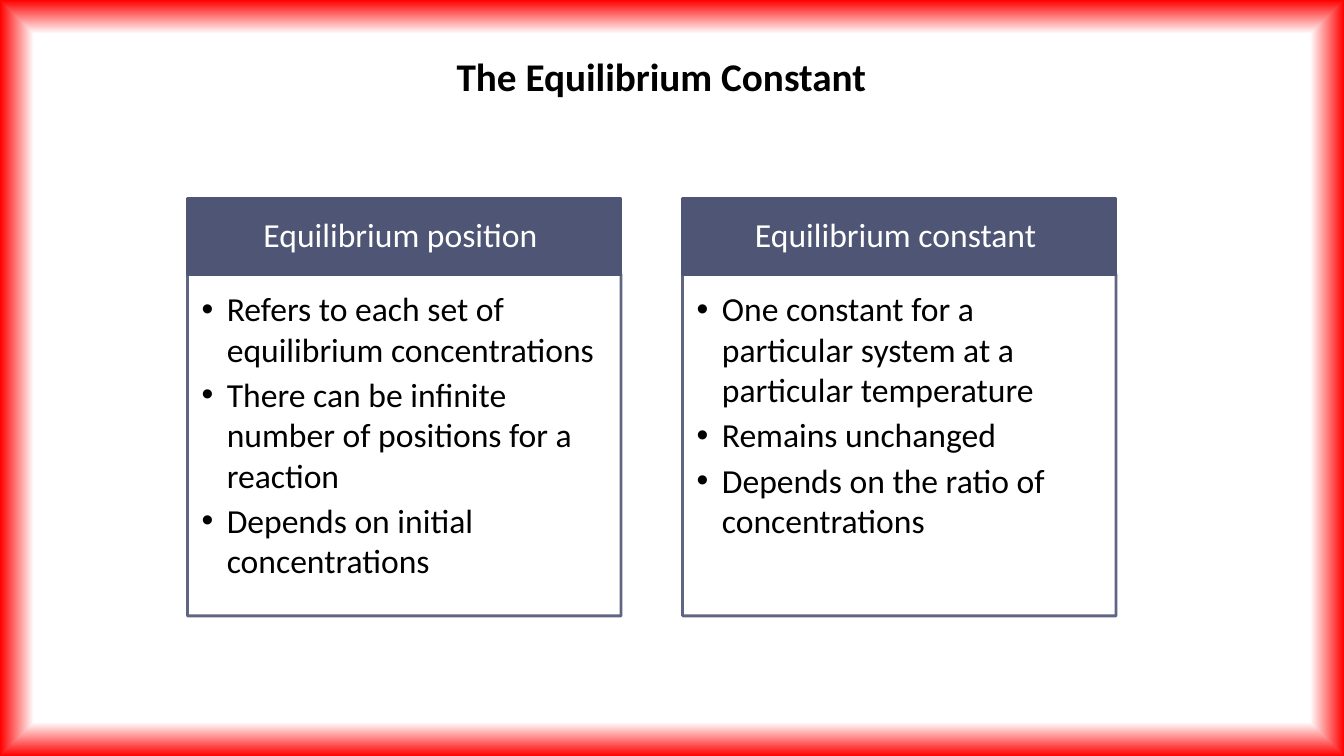
"""Build a slide that compares equilibrium position with equilibrium constant."""
from dataclasses import dataclass

from lxml.etree import SubElement
from pptx import Presentation
from pptx.dml.color import RGBColor
from pptx.enum.shapes import MSO_SHAPE
from pptx.enum.text import MSO_ANCHOR, PP_ALIGN
from pptx.oxml import parse_xml
from pptx.oxml.ns import nsdecls, qn
from pptx.util import Inches, Pt

TITLE = "The Equilibrium Constant"
CARDS = [
    ("Equilibrium position ", [
        "Refers to each set of equilibrium concentrations",
        "There can be infinite number of positions for a reaction",
        "Depends on initial concentrations",
    ]),
    ("Equilibrium constant ", [
        "One constant for a particular system at a particular temperature",
        "Remains unchanged",
        "Depends on the ratio of concentrations",
    ]),
]

SLIDE_WIDTH, SLIDE_HEIGHT = 13.33, 7.5
TITLE_BOX = (4.43, 0.47, 4.76, 0.57)
CARD_LEFT, CARD_TOP = 1.86, 1.97
CARD_WIDTH, CARD_GAP = 4.3, 0.61
HEADING_HEIGHT, BODY_HEIGHT = 0.75, 3.39
BULLET_INDENT = 0.25


@dataclass(frozen=True)
class Theme:
    font: str = "Calibri"
    ink: str = "000000"
    paper: str = "FFFFFF"
    slate: str = "4E5575"
    glow: str = "FF0000"
    title_size: int = 28
    text_size: int = 24
    line_width: int = 2
    bullet_gap: float = 3.6
    outline_alpha: int = 90


THEME = Theme()


def paint_background(slide):
    stops = [(0, THEME.paper), (73, THEME.paper), (91, THEME.paper), (100, THEME.glow)]
    stop_xml = "".join(
        f'<a:gs pos="{share * 1000}"><a:srgbClr val="{color}"/></a:gs>'
        for share, color in stops
    )
    background = parse_xml(
        f'<p:bg {nsdecls("p", "a")}><p:bgPr><a:gradFill rotWithShape="1">'
        f'<a:gsLst>{stop_xml}</a:gsLst><a:path path="shape">'
        '<a:fillToRect l="50000" t="50000" r="50000" b="50000"/></a:path>'
        '</a:gradFill><a:effectLst/></p:bgPr></p:bg>'
    )
    slide.element.cSld.insert(0, background)


def add_bullet(paragraph):
    properties = paragraph._p.get_or_add_pPr()
    properties.set("marL", str(Inches(BULLET_INDENT)))
    properties.set("indent", str(-Inches(BULLET_INDENT)))
    SubElement(properties, qn("a:buFont"), typeface="Arial")
    SubElement(properties, qn("a:buChar"), char="•")


def write_text(shape, lines, *, size=THEME.text_size, color=THEME.ink, bold=False,
               align=PP_ALIGN.LEFT, anchor=MSO_ANCHOR.TOP, margins=(0.1, 0.05, 0.1, 0.05),
               spacing=None, gap=None, bullets=False):
    frame = shape.text_frame
    frame.word_wrap = True
    frame.vertical_anchor = anchor
    (frame.margin_left, frame.margin_top,
     frame.margin_right, frame.margin_bottom) = map(Inches, margins)
    for index, line in enumerate(lines):
        paragraph = frame.add_paragraph() if index else frame.paragraphs[0]
        paragraph.alignment = align
        paragraph.line_spacing = spacing
        paragraph.space_after = gap
        if bullets:
            add_bullet(paragraph)
        run = paragraph.add_run()
        run.text = line
        run.font.name = THEME.font
        run.font.size = Pt(size)
        run.font.bold = bold
        run.font.color.rgb = RGBColor.from_string(color)


def add_panel(slide, left, top, height, *, filled):
    panel = slide.shapes.add_shape(
        MSO_SHAPE.RECTANGLE, *map(Inches, (left, top, CARD_WIDTH, height)))
    panel.shadow.inherit = False
    panel.line.width = Pt(THEME.line_width)
    panel.line.color.rgb = RGBColor.from_string(THEME.slate)
    if filled:
        panel.fill.solid()
        panel.fill.fore_color.rgb = RGBColor.from_string(THEME.slate)
    else:
        panel.fill.background()
        outline = panel.line._ln.find(".//" + qn("a:srgbClr"))
        SubElement(outline, qn("a:alpha"), val=str(THEME.outline_alpha * 1000))
    return panel


def add_card(slide, left, heading, points):
    header = add_panel(slide, left, CARD_TOP, HEADING_HEIGHT, filled=True)
    write_text(header, [heading], color=THEME.paper, align=PP_ALIGN.CENTER,
               anchor=MSO_ANCHOR.MIDDLE, margins=(0.19, 0.11, 0.19, 0.11), spacing=0.9)
    body = add_panel(slide, left, CARD_TOP + HEADING_HEIGHT, BODY_HEIGHT, filled=False)
    write_text(body, points, margins=(0.14, 0.14, 0.19, 0.21),
               gap=Pt(THEME.bullet_gap), bullets=True)


def main():
    presentation = Presentation()
    presentation.slide_width = Inches(SLIDE_WIDTH)
    presentation.slide_height = Inches(SLIDE_HEIGHT)
    slide = presentation.slides.add_slide(presentation.slide_layouts[6])
    paint_background(slide)
    title = slide.shapes.add_textbox(*map(Inches, TITLE_BOX))
    write_text(title, [TITLE], size=THEME.title_size, bold=True)
    for column, (heading, points) in enumerate(CARDS):
        add_card(slide, CARD_LEFT + column * (CARD_WIDTH + CARD_GAP), heading, points)
    presentation.save("out.pptx")


if __name__ == "__main__":
    main()
